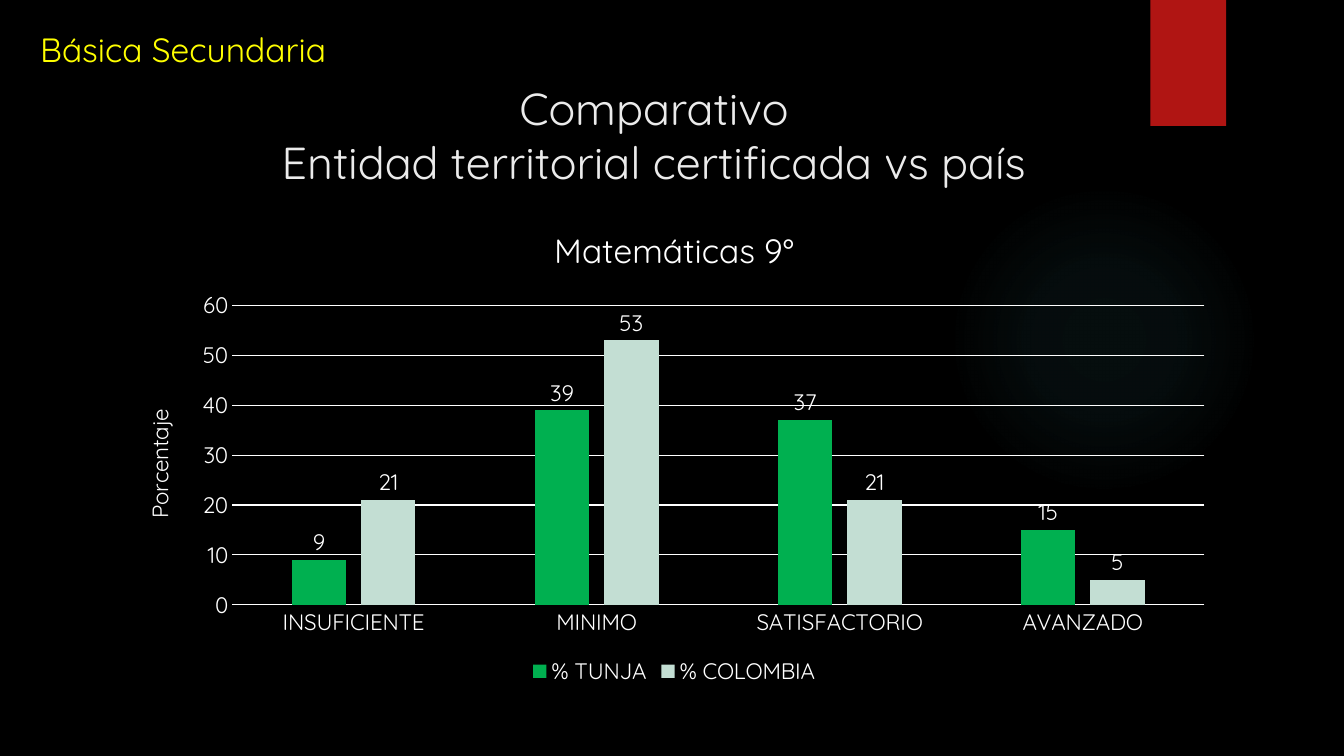
from dataclasses import dataclass

from lxml import etree
from pptx import Presentation
from pptx.chart.data import CategoryChartData
from pptx.dml.color import RGBColor
from pptx.enum.chart import XL_CHART_TYPE, XL_LABEL_POSITION, XL_LEGEND_POSITION, XL_TICK_MARK
from pptx.enum.shapes import MSO_SHAPE
from pptx.enum.text import MSO_ANCHOR, MSO_AUTO_SIZE, PP_ALIGN
from pptx.oxml import parse_xml
from pptx.oxml.ns import nsdecls, qn
from pptx.util import Pt

CLUSTERED = XL_CHART_TYPE.COLUMN_CLUSTERED
OUTSIDE_END = XL_LABEL_POSITION.OUTSIDE_END
LEGEND_BOTTOM = XL_LEGEND_POSITION.BOTTOM
NO_TICK = XL_TICK_MARK.NONE
ELLIPSE = MSO_SHAPE.OVAL
RECTANGLE = MSO_SHAPE.RECTANGLE
TOP = MSO_ANCHOR.TOP
NO_AUTOFIT = MSO_AUTO_SIZE.NONE
CENTER = PP_ALIGN.CENTER

FONT = "Quicksand"
WHITE = "FFFFFF"
LABEL_SIZE = 16
HEADING_SIZE = 24
LEVELS = ["INSUFICIENTE", "MINIMO", "SATISFACTORIO", "AVANZADO"]


@dataclass(frozen=True)
class Box:
    left: float
    top: float
    width: float
    height: float

    def lengths(self):
        return Pt(self.left), Pt(self.top), Pt(self.width), Pt(self.height)


@dataclass(frozen=True)
class Territory:
    name: str
    percentages: tuple
    color: str


TERRITORIES = [
    Territory("% TUNJA", (9, 39, 37, 15), "00B050"),
    Territory("% COLOMBIA", (21, 53, 21, 5), "C3DED3"),
]


def paint(color_holder, color: str) -> None:
    color_holder.solid()
    color_holder.fore_color.rgb = RGBColor.from_string(color)


def style_font(font, size: float, color: str = WHITE) -> None:
    font.name = FONT
    font.size = Pt(size)
    font.bold = False
    paint(font.fill, color)


def add_run(paragraph, text: str, size: float, color: str = WHITE) -> None:
    run = paragraph.add_run()
    run.text = text
    style_font(run.font, size, color)


def add_decoration(slide, kind, box: Box):
    decoration = slide.shapes.add_shape(kind, *box.lengths())
    decoration.shadow.inherit = False
    decoration.line.fill.background()
    return decoration


def add_glow(slide) -> None:
    glow = add_decoration(slide, ELLIPSE, Box(677.5, 131.75, 221.75, 221.75))
    gradient = parse_xml(f'<a:gradFill {nsdecls("a")} rotWithShape="1"><a:gsLst/></a:gradFill>')
    for position, opacity in ((0, 7), (36, 6), (69, 0)):
        stop = etree.SubElement(gradient[0], qn("a:gs"), pos=str(position * 1000))
        color = etree.SubElement(stop, qn("a:srgbClr"), val="50B9C1")
        etree.SubElement(color, qn("a:alpha"), val=str(opacity * 1000))
    circle = etree.SubElement(gradient, qn("a:path"), path="circle")
    sides = dict.fromkeys("ltrb", "50000")
    etree.SubElement(circle, qn("a:fillToRect"), **sides)
    glow.element.spPr.find(qn("a:prstGeom")).addnext(gradient)


def add_title(slide) -> None:
    title = slide.shapes.title
    title.left, title.top, title.width, title.height = Box(138.25, 54, 658, 110).lengths()
    frame = title.text_frame
    frame.word_wrap = True
    frame.auto_size = NO_AUTOFIT
    frame.vertical_anchor = TOP
    heading = frame.paragraphs[0]
    heading.alignment = CENTER
    add_run(heading, "Comparativo", 32, "EBEBEB")
    heading.add_line_break()
    add_run(heading, "Entidad territorial certificada vs país", 32, "EBEBEB")


def add_school_level(slide) -> None:
    school_level = slide.shapes.add_textbox(*Box(21.6, 17.3, 232.5, 36).lengths())
    frame = school_level.text_frame
    frame.word_wrap = True
    add_run(frame.paragraphs[0], "Básica Secundaria", HEADING_SIZE, "FFFF00")


def style_axis(axis) -> None:
    axis.major_tick_mark = NO_TICK
    axis.minor_tick_mark = NO_TICK
    style_font(axis.tick_labels.font, LABEL_SIZE)


def draw_line(line) -> None:
    paint(line.fill, WHITE)
    line.width = Pt(0.75)


def add_results(slide) -> None:
    results = CategoryChartData(number_format="General")
    results.categories = LEVELS
    for territory in TERRITORIES:
        results.add_series(territory.name, territory.percentages)
    box = Box(87, 146.25, 789, 346.25)
    chart = slide.shapes.add_chart(CLUSTERED, *box.lengths(), results).chart
    style_font(chart.font, 10)

    chart.has_title = True
    add_run(chart.chart_title.text_frame.paragraphs[0], "Matemáticas 9°", HEADING_SIZE)
    chart.chart_title.include_in_layout = False
    chart.has_legend = True
    chart.legend.position = LEGEND_BOTTOM
    chart.legend.include_in_layout = False
    style_font(chart.legend.font, LABEL_SIZE)

    levels_axis, percentage_axis = chart.category_axis, chart.value_axis
    style_axis(levels_axis)
    draw_line(levels_axis.format.line)
    style_axis(percentage_axis)
    percentage_axis.format.line.fill.background()
    percentage_axis.minimum_scale = 0
    percentage_axis.maximum_scale = 60
    percentage_axis.major_unit = 10
    draw_line(percentage_axis.major_gridlines.format.line)
    percentage_axis.has_title = True
    add_run(percentage_axis.axis_title.text_frame.paragraphs[0], "Porcentaje", LABEL_SIZE)

    columns = chart.plots[0]
    columns.gap_width = 219
    columns.overlap = -27
    columns.vary_by_categories = False
    for series, territory in zip(columns.series, TERRITORIES):
        paint(series.format.fill, territory.color)
        labels = series.data_labels
        labels.show_value = True
        labels.position = OUTSIDE_END
        style_font(labels.font, LABEL_SIZE)


def main() -> None:
    presentation = Presentation()
    presentation.slide_width = Pt(960)
    presentation.slide_height = Pt(540)
    slide = presentation.slides.add_slide(presentation.slide_layouts[5])
    paint(slide.background.fill, "000000")
    add_glow(slide)
    ribbon = add_decoration(slide, RECTANGLE, Box(821.75, 0, 54, 90))
    paint(ribbon.fill, "B01513")
    add_results(slide)
    add_title(slide)
    add_school_level(slide)
    presentation.save("out.pptx")


if __name__ == "__main__":
    main()
